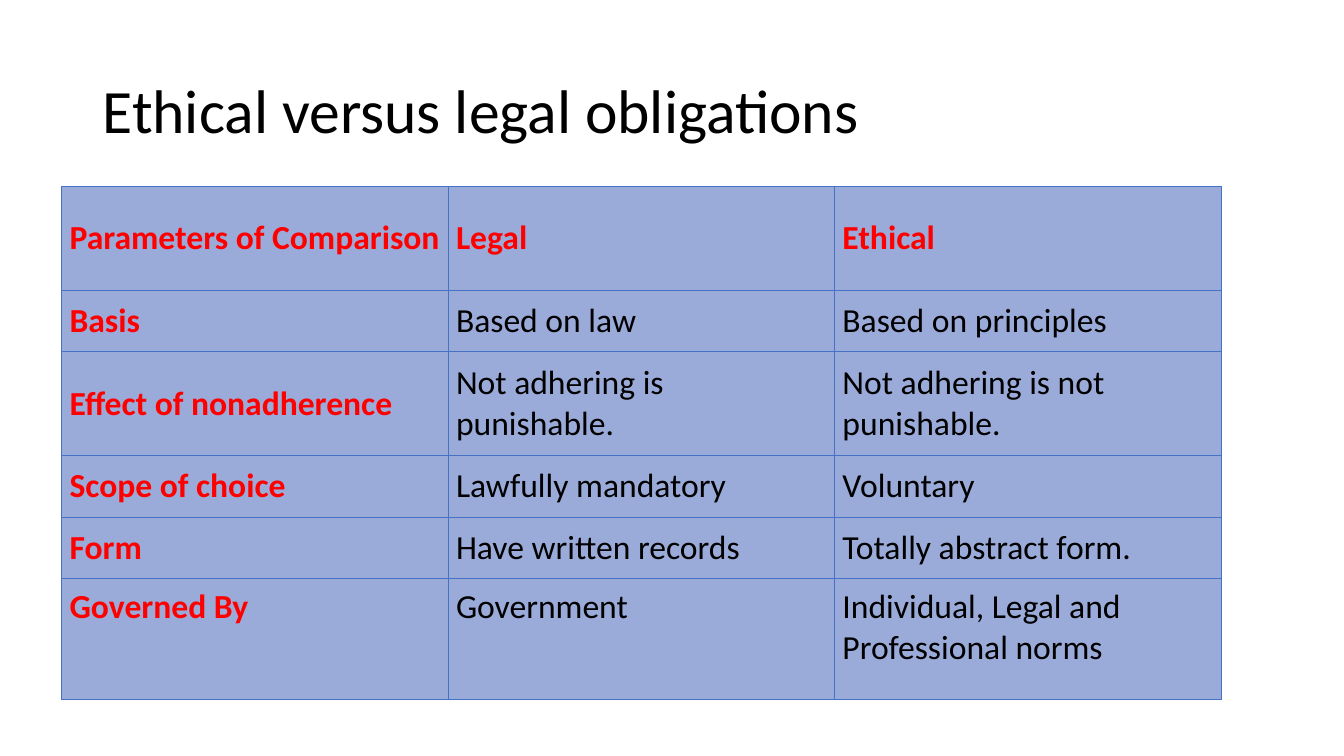
from dataclasses import dataclass

from lxml import etree
from pptx import Presentation
from pptx import util as u
from pptx.dml.color import RGBColor
from pptx.enum import text
from pptx.oxml import ns

WIDE, HIGH = 13.33, 7.5
FONT = "Calibri"
BLACK, RED, FILL, RULE = "000000", "FF0000", "9BABD9", "4472C4"
PAD = u.Inches(0.08)
MID, TOP = text.MSO_ANCHOR.MIDDLE, text.MSO_ANCHOR.TOP


@dataclass
class Row:
    high: float
    cells: tuple[str, str, str]
    anchor: text.MSO_ANCHOR = MID


ROWS = [
    Row(1.03, ("Parameters of Comparison", "Legal", "Ethical")),
    Row(0.61, ("Basis", "Based on law", "Based on principles")),
    Row(1.03, ("Effect of nonadherence", "Not adhering is punishable.",
               "Not adhering is not punishable.")),
    Row(0.61, ("Scope of choice", "Lawfully mandatory", "Voluntary")),
    Row(0.61, ("Form", "Have written records", "Totally abstract form.")),
    Row(1.2, ("Governed By", "Government",
              "Individual, Legal and Professional norms"), TOP),
]


def tint(code: str) -> RGBColor:
    return RGBColor.from_string(code)


def style(frame, size: float, code: str, bold: bool = False) -> None:
    for run in frame.paragraphs[0].runs:
        font = run.font
        font.name, font.size, font.bold = FONT, u.Pt(size), bold
        font.color.rgb = tint(code)


def edge(cell, code: str, width: float) -> None:
    """Rule all four sides; borders must come before the fill."""
    props = cell._tc.get_or_add_tcPr()
    for spot, side in enumerate(("lnL", "lnR", "lnT", "lnB")):
        line = etree.Element(ns.qn(f"a:{side}"), w=str(u.Pt(width)))
        solid = etree.SubElement(line, ns.qn("a:solidFill"))
        etree.SubElement(solid, ns.qn("a:srgbClr"), val=code)
        props.insert(spot, line)


def title(slide, words: str) -> None:
    box = slide.shapes.add_textbox(
        *map(u.Inches, (0.92, 0.4, 11.5, 1.45)))
    frame = box.text_frame
    frame.text = words
    frame.word_wrap = True
    frame.vertical_anchor = MID
    frame.paragraphs[0].line_spacing = 0.9
    style(frame, 44, BLACK)


def grid(slide, rows: list[Row]) -> None:
    high = sum(row.high for row in rows)
    table = slide.shapes.add_table(
        len(rows), 3, *map(u.Inches, (0.61, 1.85, 11.5, high))).table
    table.first_row = table.horz_banding = False
    for r, row in enumerate(rows):
        table.rows[r].height = u.Inches(row.high)
        for c, words in enumerate(row.cells):
            cell = table.cell(r, c)
            cell.text_frame.text = words
            cell.vertical_anchor = row.anchor
            cell.margin_left = cell.margin_right = PAD
            cell.margin_top = cell.margin_bottom = PAD
            cell.fill.solid()
            cell.fill.fore_color.rgb = tint(FILL)
            edge(cell, RULE, 0.5)
            head = r == 0 or c == 0
            style(cell.text_frame, 24, RED if head else BLACK, head)


def main() -> None:
    deck = Presentation()
    deck.slide_width, deck.slide_height = u.Inches(WIDE), u.Inches(HIGH)
    slide = deck.slides.add_slide(deck.slide_layouts[6])
    # Heading
    title(slide, "Ethical versus legal obligations")
    # Comparison table
    grid(slide, ROWS)
    deck.save("out.pptx")


if __name__ == "__main__":
    main()
